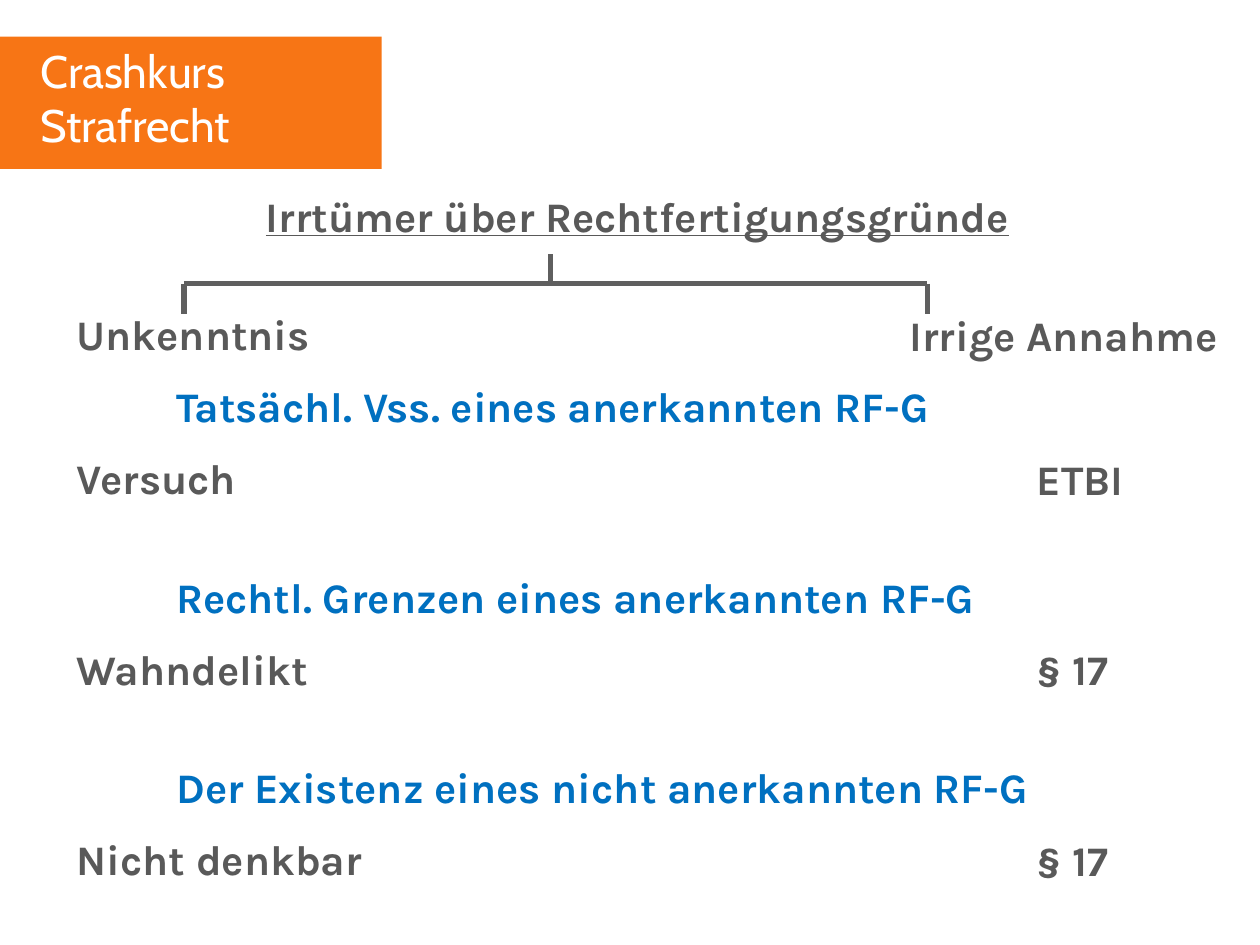
from typing import NamedTuple

from lxml import etree
from pptx import Presentation
from pptx import util as u
from pptx.dml.color import RGBColor
from pptx.enum import shapes, text
from pptx.oxml.ns import qn

ORANGE = RGBColor(0xF7, 0x75, 0x15)
GREY = RGBColor(0x59, 0x59, 0x59)
LINE_GREY = RGBColor(0x5F, 0x5F, 0x5F)
BLUE = RGBColor(0x00, 0x70, 0xC0)
WHITE = RGBColor(0xFF, 0xFF, 0xFF)

WIDTH, HEIGHT = u.Inches(10), u.Inches(7.5)

# Indents of the left labels and of the topics in the body box
OUTER, INNER = u.Inches(0.39), u.Inches(1.18)

# Space after a paragraph: to the next line, or to the next group
NEAR_GAP, GROUP_GAP = u.Pt(12.4), u.Pt(38.8)

# Right column, in percent of the slide
HEAD_LEFT, HEAD_TOP = 71.2, 32.1
CASE_LEFT, CASE_TOP, CASE_STEP = 81.3, 47.3, 20.16
LABEL_HEIGHT = 6.5

BODY_FONT = {"name": "Karla", "size": u.Pt(24), "bold": True}
TITLE_FONT = {"name": "Cabin", "size": u.Pt(26), "bold": False}


class Case(NamedTuple):
    topic: str
    unaware: str
    mistaken: str


class Line(NamedTuple):
    x1: float
    y1: float
    x2: float
    y2: float


CASES = [
    Case("Tatsächl. Vss. eines anerkannten RF-G", "Versuch", "ETBI"),
    Case("Rechtl. Grenzen eines anerkannten RF-G", "Wahndelikt", "§ 17"),
    Case("Der Existenz eines nicht anerkannten RF-G", "Nicht denkbar", "§ 17"),
]

# Bracket, in percent of the slide
LEFT, STEM, RIGHT = 14.6, 43.7, 73.6
TOP, BAR, BOTTOM = 26.93, 30, 33.2
BRACKET = [
    Line(LEFT, BAR, RIGHT, BAR),
    Line(LEFT, BAR, LEFT, BOTTOM),
    Line(RIGHT, BAR, RIGHT, BOTTOM),
    Line(STEM, TOP, STEM, BAR),
]


def x(percent: float) -> int:
    return round(WIDTH * percent / 100)


def y(percent: float) -> int:
    return round(HEIGHT * percent / 100)


def box(left: float, top: float, width: float, height: float) -> tuple:
    return x(left), y(top), x(width), y(height)


def set_all(target, values: dict) -> None:
    for name, value in values.items():
        setattr(target, name, value)


def write(p, words: str, color: RGBColor, values: dict) -> None:
    r = p.add_run()
    r.text = words
    set_all(r.font, values)
    r.font.color.rgb = color


def add_paragraph(tf, words: str, color: RGBColor, margin: int, gap: int) -> None:
    p = tf.add_paragraph()
    pPr = p._p.get_or_add_pPr()
    pPr.set("marL", str(margin))
    pPr.set("indent", "0")
    p.space_after = gap
    write(p, words, color, BODY_FONT)


def add_text_box(s, left: float, top: float, height: float):
    """Add a text box that runs to the right edge of the slide."""
    tf = s.shapes.add_textbox(*box(left, top, 100 - left, height)).text_frame
    tf.word_wrap = True
    return tf


def add_label(s, words: str, left: float, top: float) -> None:
    tf = add_text_box(s, left, top, LABEL_HEIGHT)
    write(tf.paragraphs[0], words, GREY, BODY_FONT)


def add_line(s, line: Line) -> None:
    c = s.shapes.add_connector(shapes.MSO_CONNECTOR.STRAIGHT,
                               x(line.x1), y(line.y1), x(line.x2), y(line.y2))
    c.line.color.rgb = LINE_GREY
    c.line.width = u.Pt(3)
    etree.SubElement(c._element.spPr, qn("a:effectLst"))


def add_banner(s) -> None:
    sp = s.shapes.add_shape(shapes.MSO_SHAPE.RECTANGLE, *box(0, 3.87, 30.3, 14))
    sp.shadow.inherit = False
    sp.fill.solid()
    sp.fill.fore_color.rgb = ORANGE
    sp.line.fill.background()

    # The title sits on the banner
    title = s.shapes.title
    s.shapes._spTree.append(title._element)
    frame = box(2.2, 3.87, 26, 13.07)
    set_all(title, dict(zip(("left", "top", "width", "height"), frame)))
    tf = title.text_frame
    set_all(tf, {"word_wrap": True, "auto_size": text.MSO_AUTO_SIZE.NONE,
                 "vertical_anchor": text.MSO_ANCHOR.TOP})
    p = tf.paragraphs[0]
    p.alignment = text.PP_ALIGN.LEFT
    write(p, "Crashkurs Strafrecht", WHITE, TITLE_FONT)


def add_body(s) -> None:
    # Heading, topics and left labels
    tf = add_text_box(s, 1.2, 19.5, 75.47)
    p = tf.paragraphs[0]
    set_all(p, {"alignment": text.PP_ALIGN.CENTER, "space_after": GROUP_GAP})
    write(p, "Irrtümer über Rechtfertigungsgründe", GREY,
          {**BODY_FONT, "underline": True})
    add_paragraph(tf, "Unkenntnis", GREY, OUTER, NEAR_GAP)
    for case in CASES:
        add_paragraph(tf, case.topic, BLUE, INNER, NEAR_GAP)
        add_paragraph(tf, case.unaware, GREY, OUTER, GROUP_GAP)

    # Right labels, level with the left ones
    add_label(s, "Irrige Annahme", HEAD_LEFT, HEAD_TOP)
    for i, case in enumerate(CASES):
        add_label(s, case.mistaken, CASE_LEFT, CASE_TOP + i * CASE_STEP)


def main() -> None:
    prs = Presentation()
    prs.slide_width, prs.slide_height = WIDTH, HEIGHT
    s = prs.slides.add_slide(prs.slide_layouts[5])
    add_banner(s)
    add_body(s)
    for line in BRACKET:
        add_line(s, line)
    prs.save("out.pptx")


if __name__ == "__main__":
    main()
